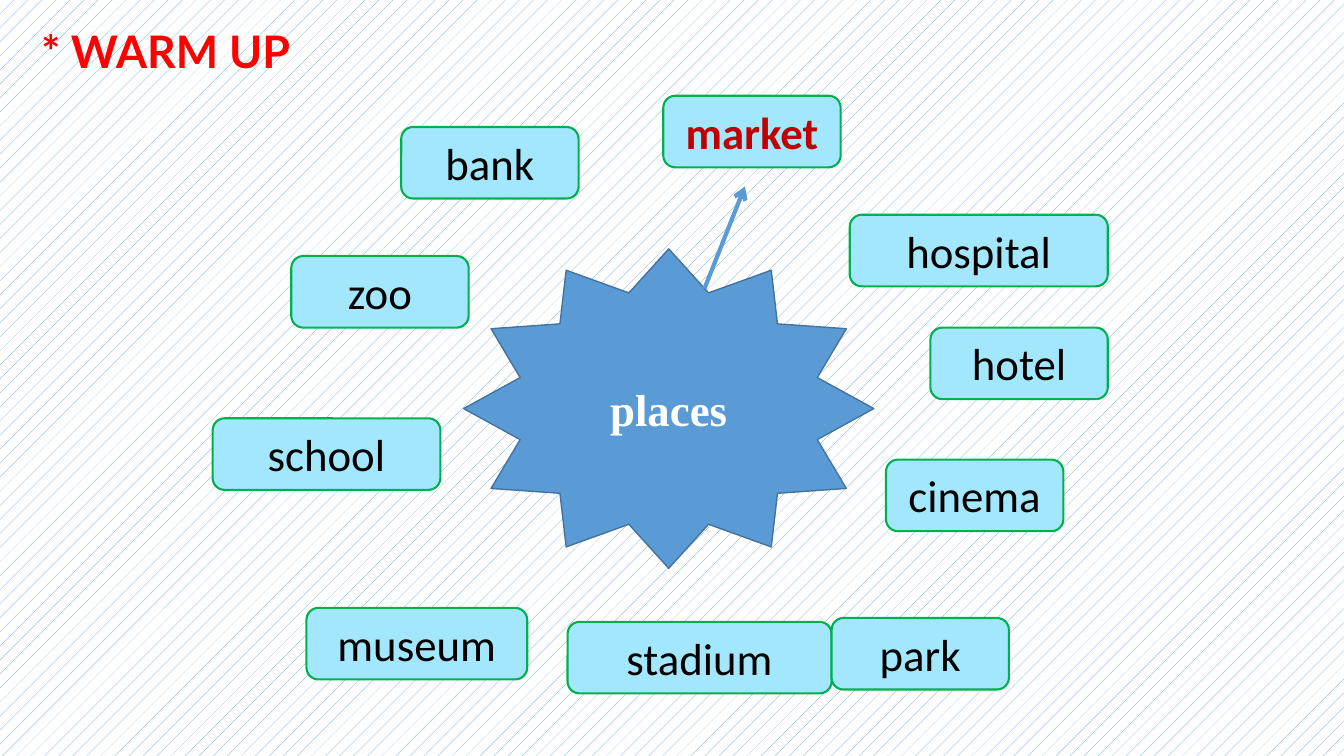
from lxml.etree import SubElement
from pptx import Presentation
from pptx.dml.color import RGBColor
from pptx.enum.dml import MSO_PATTERN
from pptx.enum.shapes import MSO_CONNECTOR, MSO_SHAPE
from pptx.enum.text import MSO_ANCHOR, MSO_AUTO_SIZE, PP_ALIGN
from pptx.oxml.ns import qn
from pptx.util import Pt


def rgb(value):
    return RGBColor.from_string(value)


def write(sp, text, font, color, bold, align, anchor):
    tf = sp.text_frame
    tf.word_wrap = True
    tf.auto_size = MSO_AUTO_SIZE.NONE
    tf.vertical_anchor = anchor
    p = tf.paragraphs[0]
    p.alignment = align
    r = p.add_run()
    r.text = text
    r.font.name = font
    r.font.size = Pt(32)
    r.font.bold = bold
    r.font.color.rgb = rgb(color)


prs = Presentation()
prs.slide_width, prs.slide_height = Pt(960), Pt(540)
s = prs.slides.add_slide(prs.slide_layouts[5])

bg = s.background.fill
bg.patterned()
bg.pattern = MSO_PATTERN.PERCENT_5
bg.fore_color.rgb = rgb("5B9BD5")
bg.back_color.rgb = rgb("FFFFFF")

title = s.shapes.title
title.left, title.top, title.width, title.height = Pt(22.3), Pt(10.8), Pt(210.2), Pt(56.2)
write(title, "* WARM UP", "Lato", "FF0000", True, PP_ALIGN.LEFT, MSO_ANCHOR.MIDDLE)
title.text_frame.paragraphs[0].line_spacing = 0.9

# Word, left, top, width
places = [
    ("hospital", 607, 153.4, 184.3),
    ("cinema", 632.9, 328.3, 126.7),
    ("zoo", 208.1, 182.9, 126.7),
    ("bank", 286.6, 90.7, 126.7),
    ("stadium", 405.4, 444.2, 188.6),
    ("school", 151.9, 298.8, 162.7),
    ("museum", 218.9, 434.2, 157.7),
    ("market", 473.8, 68.4, 126.7),
    ("hotel", 664.6, 234, 126.7),
    ("park", 594, 441.4, 126.7),
]
for word, left, top, width in places:
    sp = s.shapes.add_shape(MSO_SHAPE.ROUNDED_RECTANGLE, Pt(left), Pt(top), Pt(width), Pt(51.1))
    sp.shadow.inherit = False
    sp.fill.solid()
    sp.fill.fore_color.rgb = rgb("A3E7FF")
    sp.line.color.rgb = rgb("00B050")
    sp.line.width = Pt(1.5)
    example = word == "market"
    write(sp, word, "Calibri", "C00000" if example else "000000", example,
          PP_ALIGN.CENTER, MSO_ANCHOR.TOP)

star = s.shapes.add_shape(MSO_SHAPE.STAR_12_POINT, Pt(331.2), Pt(177.8), Pt(293), Pt(228.2))
star.shadow.inherit = False
star.fill.solid()
star.fill.fore_color.rgb = rgb("5B9BD5")
star.line.color.rgb = rgb("43739E")
star.line.width = Pt(1)
write(star, "places", "Times New Roman", "FFFFFF", True, PP_ALIGN.CENTER, MSO_ANCHOR.MIDDLE)

arrow = s.shapes.add_connector(MSO_CONNECTOR.STRAIGHT, Pt(503.3), Pt(205.9), Pt(532.1), Pt(133.2))
arrow.line.color.rgb = rgb("5B9BD5")
arrow.line.width = Pt(3)
SubElement(arrow.line._get_or_add_ln(), qn("a:tailEnd"), type="arrow")
SubElement(arrow._element.spPr, qn("a:effectLst"))

prs.save("out.pptx")
